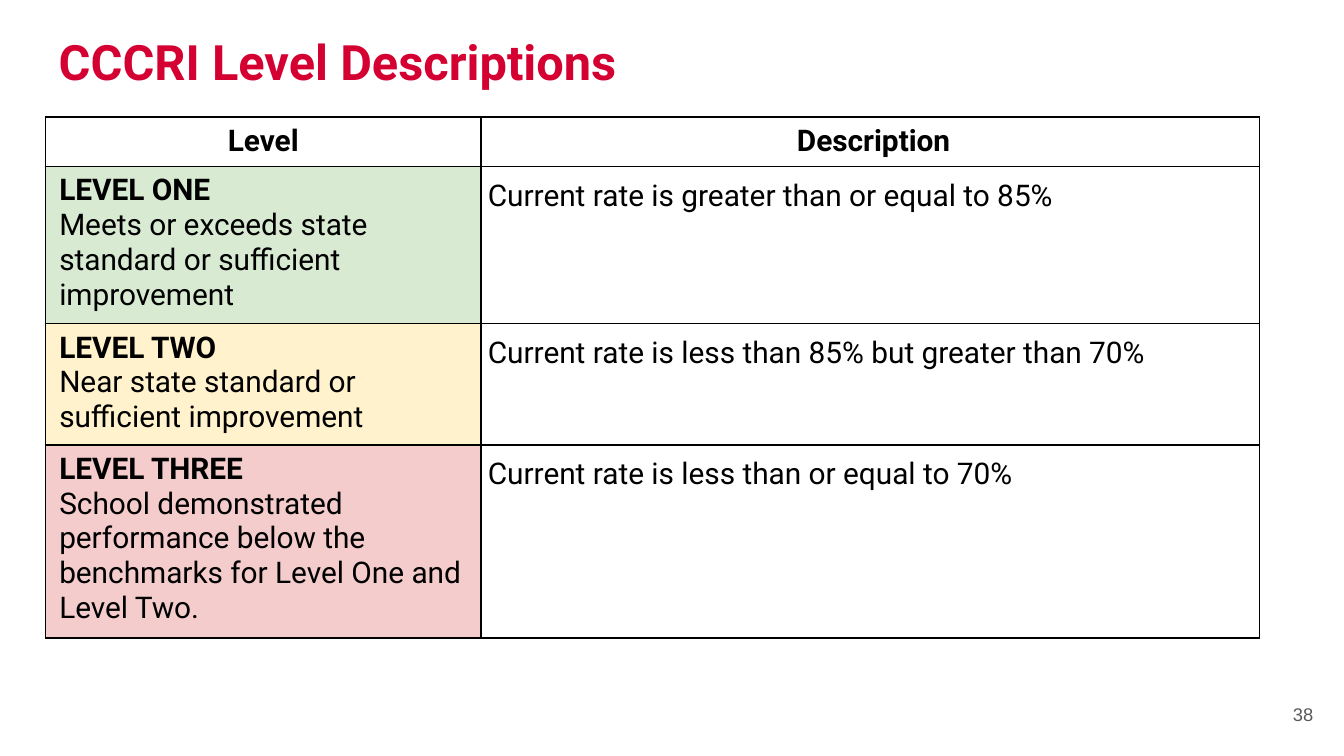
from dataclasses import dataclass

from lxml.etree import SubElement
from pptx import Presentation
from pptx.dml.color import RGBColor
from pptx.enum.text import MSO_ANCHOR, MSO_AUTO_SIZE, PP_ALIGN
from pptx.oxml.ns import qn
from pptx.util import Cm, Pt


@dataclass(frozen=True)
class Theme:
    font: str = "Roboto"
    number_font: str = "Arial"
    red: str = "D50032"
    black: str = "000000"
    gray: str = "595959"
    white: str = "FFFFFF"
    green: str = "D9EAD3"
    yellow: str = "FFF2CC"
    pink: str = "F4CCCC"
    title_size: float = 26.1
    table_size: float = 16
    number_size: float = 9.8
    border_width: float = 1


THEME = Theme()
HEADERS = ("Level", "Description")
LEVELS = (
    ("LEVEL ONE", "Meets or exceeds state standard or sufficient improvement",
     "Current rate is greater than or equal to 85%", THEME.green),
    ("LEVEL TWO", "Near state standard or sufficient improvement",
     "Current rate is less than 85% but greater than 70%", THEME.yellow),
    ("LEVEL THREE",
     "School demonstrated performance below the benchmarks for Level One and Level Two.",
     "Current rate is less than or equal to 70%", THEME.pink),
)
COLUMN_WIDTHS = (8.23, 14.71)
ROW_HEIGHTS = (0.88, 2.85, 2.19, 3.5)


def style_runs(para, font_name, size, color, bold=False):
    for span in para.runs:
        span.font.name = font_name
        span.font.size = Pt(size)
        span.font.bold = bold
        span.font.color.rgb = RGBColor.from_string(color)


def set_margins(holder, margin):
    holder.margin_left = holder.margin_right = Cm(margin)
    holder.margin_top = holder.margin_bottom = Cm(margin)


def place(shape, box):
    shape.left, shape.top, shape.width, shape.height = (Cm(length) for length in box)


def add_title(page, box):
    title = page.shapes.title
    place(title, box)
    frame = title.text_frame
    frame.text = "CCCRI Level Descriptions"
    frame.word_wrap = True
    frame.auto_size = MSO_AUTO_SIZE.NONE
    frame.vertical_anchor = MSO_ANCHOR.TOP
    set_margins(frame, 0.25)
    para = frame.paragraphs[0]
    para.alignment = PP_ALIGN.LEFT
    style_runs(para, THEME.font, THEME.title_size, THEME.red, bold=True)


def add_page_number(page, box):
    frame = page.shapes.add_textbox(*(Cm(length) for length in box)).text_frame
    frame.text = "38"
    frame.word_wrap = True
    frame.vertical_anchor = MSO_ANCHOR.MIDDLE
    set_margins(frame, 0.25)
    para = frame.paragraphs[0]
    para.alignment = PP_ALIGN.RIGHT
    style_runs(para, THEME.number_font, THEME.number_size, THEME.gray)


def add_borders(cell):
    properties = cell._tc.get_or_add_tcPr()
    for side in ("a:lnL", "a:lnR", "a:lnT", "a:lnB"):
        line = SubElement(properties, qn(side), w=str(Pt(THEME.border_width)))
        fill = SubElement(line, qn("a:solidFill"))
        SubElement(fill, qn("a:srgbClr"), val=THEME.black)


def fill_cell(cell, lines, color=THEME.white, bold_first=False, indent=0.0,
              align=PP_ALIGN.LEFT, spacing=None):
    add_borders(cell)
    cell.fill.solid()
    cell.fill.fore_color.rgb = RGBColor.from_string(color)
    set_margins(cell, 0.13)
    cell.text_frame.text = "\n".join(lines)
    for index, para in enumerate(cell.text_frame.paragraphs):
        para._p.get_or_add_pPr().set("marL", str(Cm(indent)))
        para.alignment = align
        para.line_spacing = spacing
        style_runs(para, THEME.font, THEME.table_size, THEME.black,
                   bold=bold_first and index == 0)


def add_level_table(page, box):
    frame = page.shapes.add_table(len(LEVELS) + 1, len(HEADERS),
                                  *(Cm(length) for length in box))
    table = frame.table
    table.first_row = table.horz_banding = False
    for column, width in zip(table.columns, COLUMN_WIDTHS):
        column.width = Cm(width)
    for row, height in zip(table.rows, ROW_HEIGHTS):
        row.height = Cm(height)
    for index, header in enumerate(HEADERS):
        fill_cell(table.cell(0, index), [header], bold_first=True,
                  indent=0.13 * index, align=PP_ALIGN.CENTER)
    for index, (level, meaning, description, color) in enumerate(LEVELS, start=1):
        fill_cell(table.cell(index, 0), [level, meaning], color,
                  bold_first=True, indent=0.13)
        fill_cell(table.cell(index, 1), [description], spacing=1.15)


def main():
    deck = Presentation()
    deck.slide_width, deck.slide_height = Cm(25.4), Cm(14.29)
    page = deck.slides.add_slide(deck.slide_layouts[5])
    add_title(page, (0.86, 0.36, 24.18, 1.6))
    add_page_number(page, (23.55, 12.95, 1.52, 1.09))
    add_level_table(page, (0.86, 2.21, sum(COLUMN_WIDTHS), sum(ROW_HEIGHTS)))
    deck.save("out.pptx")


if __name__ == "__main__":
    main()
